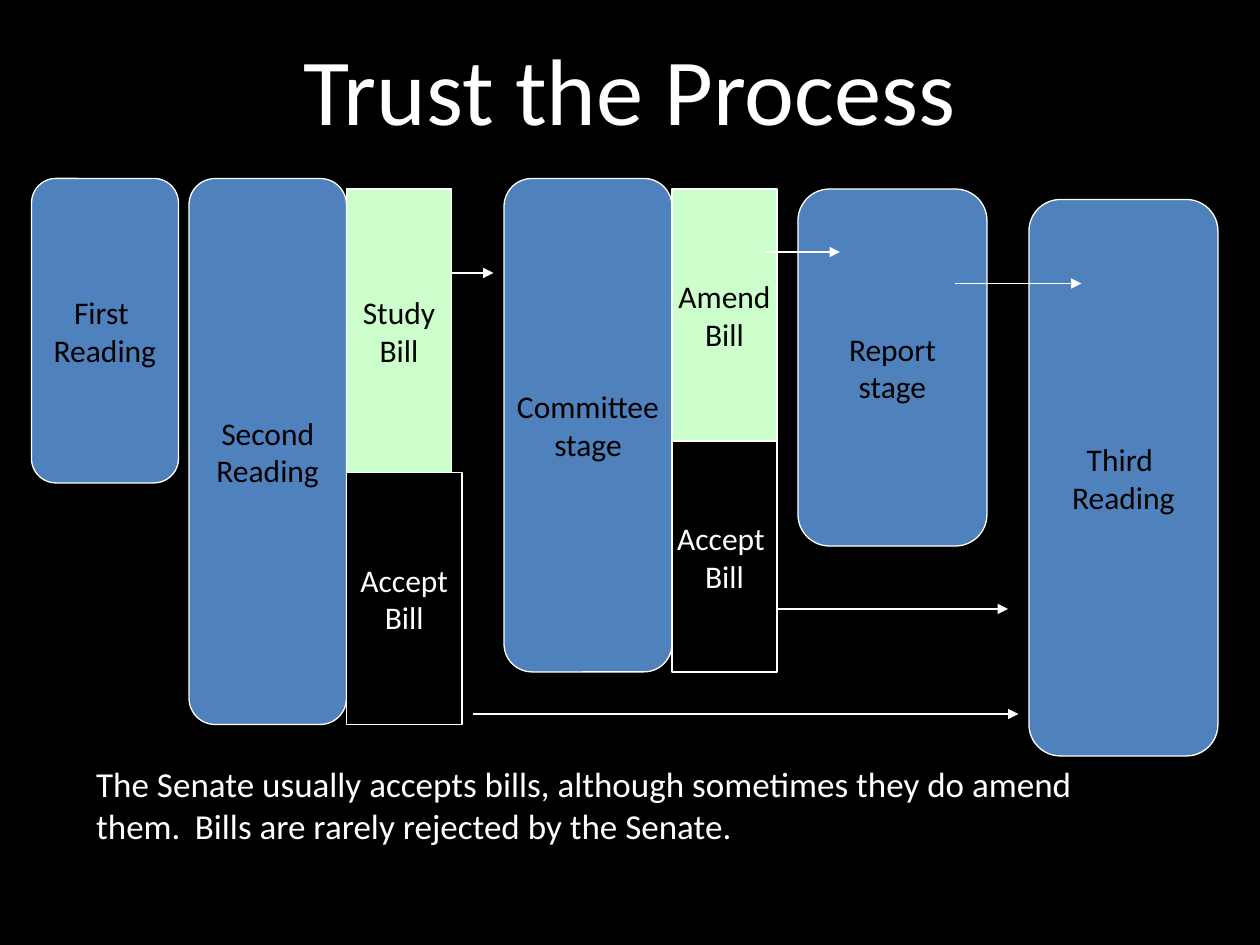
"""Build the slide showing how a bill passes through the Senate."""
from lxml import etree
from pptx import Presentation
from pptx.dml.color import RGBColor
from pptx.enum.shapes import MSO_CONNECTOR, MSO_SHAPE
from pptx.enum.text import MSO_ANCHOR, MSO_AUTO_SIZE, PP_ALIGN
from pptx.oxml.ns import qn
from pptx.util import Cm, Pt

STAGE = MSO_SHAPE.FLOWCHART_ALTERNATE_PROCESS
OUTCOME = MSO_SHAPE.FLOWCHART_PROCESS
STRAIGHT = MSO_CONNECTOR.STRAIGHT
MIDDLE = MSO_ANCHOR.MIDDLE
NO_AUTOFIT = MSO_AUTO_SIZE.NONE
CENTER, LEFT = PP_ALIGN.CENTER, PP_ALIGN.LEFT

BLACK = RGBColor(0x00, 0x00, 0x00)
WHITE = RGBColor(0xFF, 0xFF, 0xFF)
BLUE = RGBColor(0x4F, 0x81, 0xBD)
GREEN = RGBColor(0xCC, 0xFF, 0xCC)

FONT = "Calibri"
LINE_WIDTH = Pt(0.75)
GRID = Cm(2.54) // 12

TITLE = "Trust the Process"
NOTE = (
    ("The Senate usually accepts bills, although sometimes they do amend them.", 20),
    ("  ", 18),
    ("Bills are rarely rejected by the Senate.", 20),
)

# Left, top, width and height count grid steps of a twelfth of an inch.
STEPS = (
    (("First ", "Reading"), STAGE, BLUE, BLACK, (3, 17, 14, 29)),
    (("Second", "Reading"), STAGE, BLUE, BLACK, (18, 17, 15, 52)),
    (("Study", "Bill"), OUTCOME, GREEN, BLACK, (33, 18, 10, 27)),
    (("Accept", "Bill"), OUTCOME, BLACK, WHITE, (33, 45, 11, 24)),
    (("Committee", "stage"), STAGE, BLUE, BLACK, (48, 17, 16, 47)),
    (("Amend", "Bill"), OUTCOME, GREEN, BLACK, (64, 18, 10, 24)),
    (("Accept ", "Bill"), OUTCOME, BLACK, WHITE, (64, 42, 10, 22)),
    (("Report", "stage"), STAGE, BLUE, BLACK, (76, 18, 18, 34)),
    (("Third ", "Reading"), STAGE, BLUE, BLACK, (98, 19, 18, 53)),
)
ARROWS = ((45, 97, 68), (74, 96, 58), (43, 47, 26), (73, 80, 24), (91, 103, 27))


def format_run(run, size, color):
    run.font.name = FONT
    run.font.size = Pt(size)
    run.font.color.rgb = color


def add_step(slide, lines, kind, fill, text_color, place):
    step = slide.shapes.add_shape(kind, *(GRID * n for n in place))
    step.shadow.inherit = False
    step.fill.solid()
    step.fill.fore_color.rgb = fill
    step.line.color.rgb = WHITE
    step.line.width = LINE_WIDTH
    frame = step.text_frame
    frame.word_wrap = False
    frame.vertical_anchor = MIDDLE
    frame.text = "\n".join(lines)
    for paragraph in frame.paragraphs:
        paragraph.alignment = CENTER
        format_run(paragraph.runs[0], 18, text_color)


def add_arrow(slide, start, end, height):
    arrow = slide.shapes.add_connector(
        STRAIGHT, GRID * start, GRID * height, GRID * end, GRID * height)
    arrow.line.color.rgb = WHITE
    arrow.line.width = LINE_WIDTH
    etree.SubElement(arrow.line._get_or_add_ln(), qn("a:tailEnd"), type="triangle")
    etree.SubElement(arrow._element.spPr, qn("a:effectLst"))


def add_title(slide):
    title = slide.shapes.title
    title.left, title.top, title.width, title.height = Cm(5.08), Cm(0.48), Cm(15.24), Cm(2.57)
    frame = title.text_frame
    frame.text = TITLE
    frame.auto_size = NO_AUTOFIT
    frame.word_wrap = False
    frame.vertical_anchor = MIDDLE
    frame.paragraphs[0].alignment = CENTER
    format_run(frame.paragraphs[0].runs[0], 54, WHITE)


def add_note(slide):
    note = slide.shapes.add_textbox(Cm(1.69), Cm(15.24), Cm(20.53), Cm(1.96))
    note.text_frame.word_wrap = True
    paragraph = note.text_frame.paragraphs[0]
    paragraph.alignment = LEFT
    for text, size in NOTE:
        run = paragraph.add_run()
        run.text = text
        format_run(run, size, WHITE)


def main():
    deck = Presentation()
    deck.slide_width, deck.slide_height = Cm(25.4), Cm(19.05)
    slide = deck.slides.add_slide(deck.slide_layouts[5])
    slide.background.fill.solid()
    slide.background.fill.fore_color.rgb = BLACK
    add_title(slide)
    for step in STEPS:
        add_step(slide, *step)
    for arrow in ARROWS:
        add_arrow(slide, *arrow)
    add_note(slide)
    deck.save("out.pptx")


if __name__ == "__main__":
    main()
